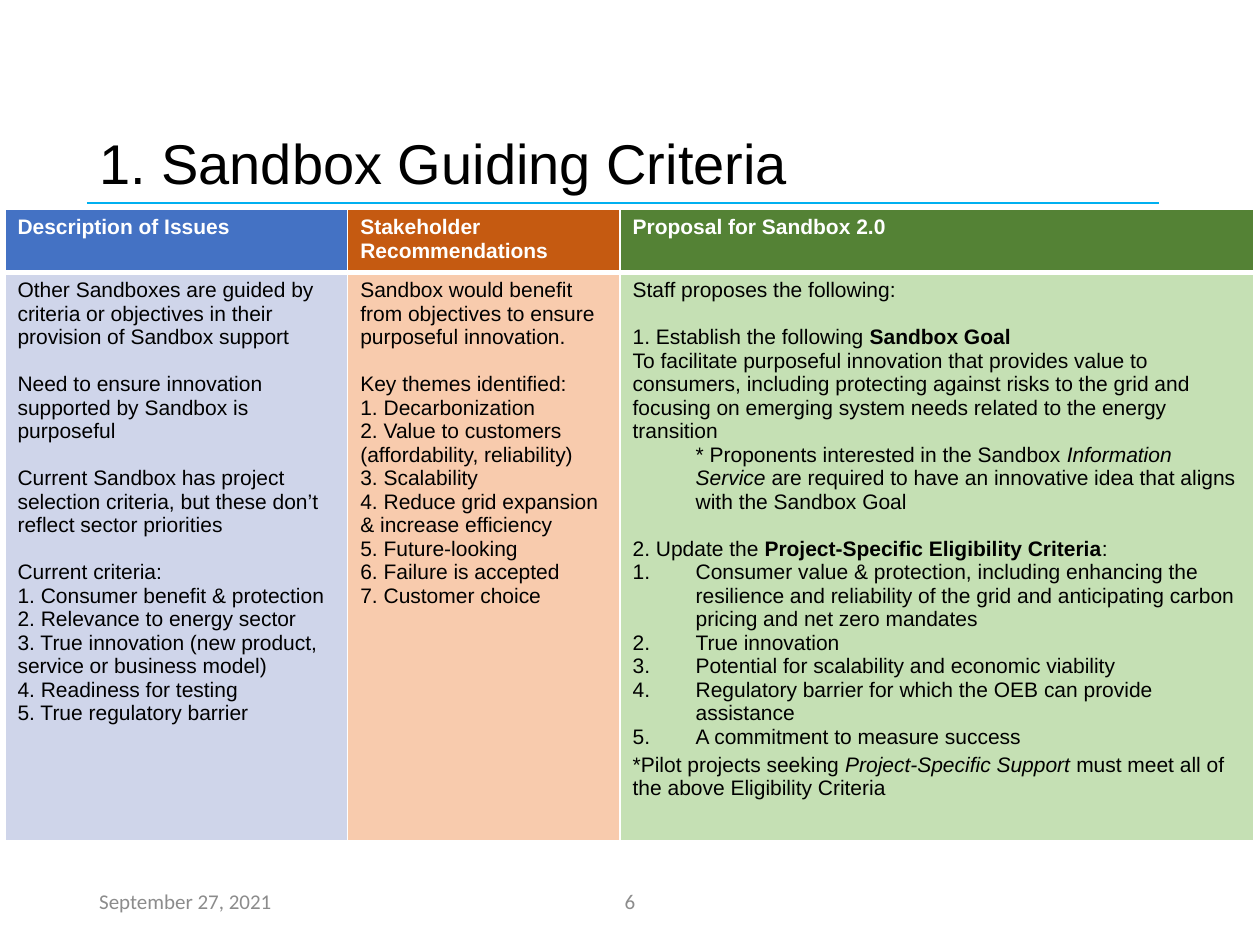
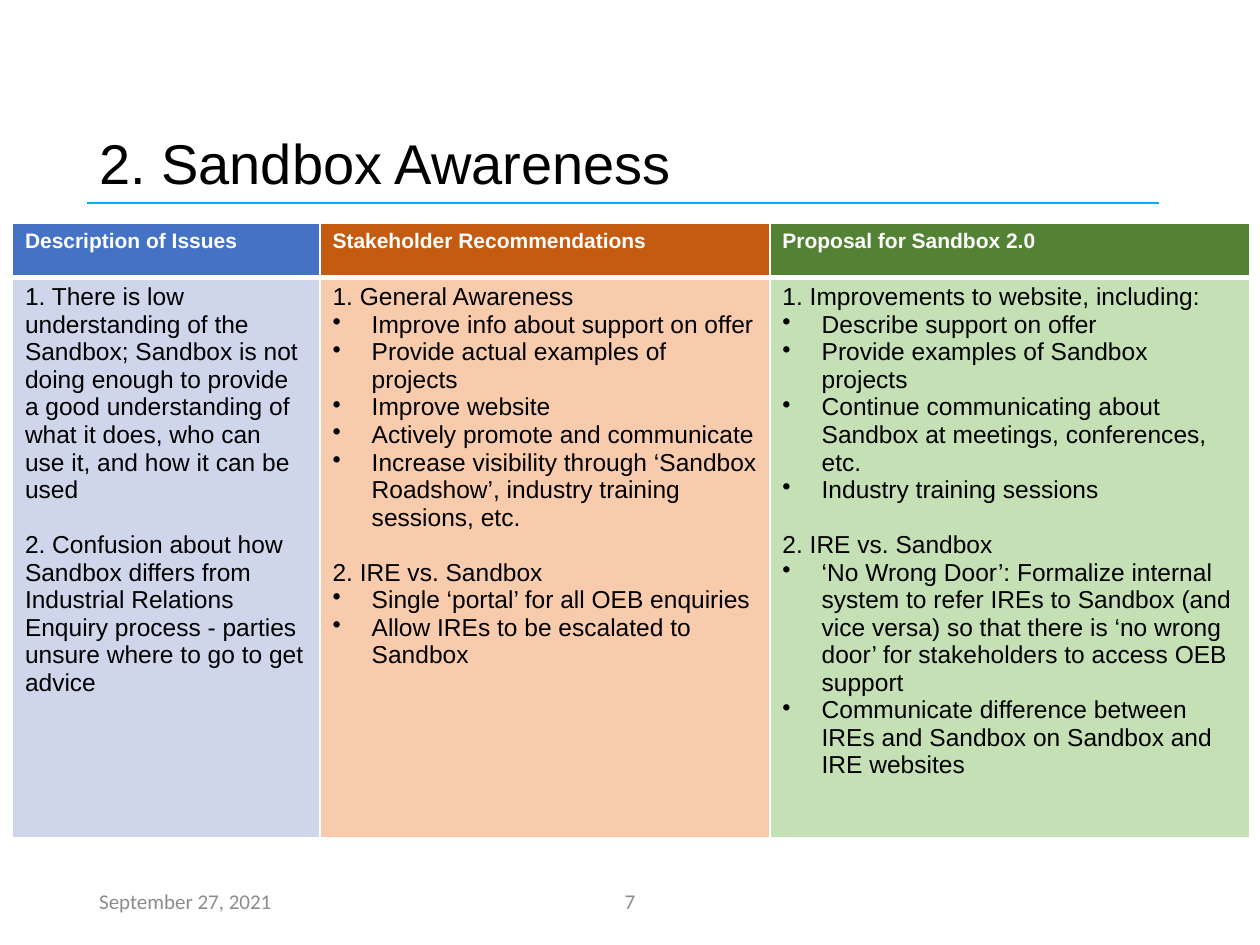
from dataclasses import dataclass

from lxml import etree
from pptx import Presentation
from pptx.dml.color import RGBColor
from pptx.enum.shapes import MSO_CONNECTOR
from pptx.enum.text import MSO_ANCHOR, PP_ALIGN
from pptx.oxml.ns import qn
from pptx.util import Cm, Pt

STRAIGHT = MSO_CONNECTOR.STRAIGHT
MIDDLE, BOTTOM = MSO_ANCHOR.MIDDLE, MSO_ANCHOR.BOTTOM
LEFT, CENTER = PP_ALIGN.LEFT, PP_ALIGN.CENTER

COLORS = {
    "text": "000000",
    "white": "FFFFFF",
    "rule": "00B0F0",
    "footer": "8C8C8C",
}
COLUMNS = [
    ("Description of Issues", "4472C4", "CFD5EA"),
    ("Stakeholder Recommendations", "C55A11", "F8CBAD"),
    ("Proposal for Sandbox 2.0", "548235", "C5E0B4"),
]
MARGIN_LEFT = 1.75
BULLETS = {
    "bullet": ("a:buChar", {"char": "•"}),
    "number": ("a:buAutoNum", {"type": "arabicPeriod"}),
}
INDENTS = {"bullet": (0.79, -0.79), "number": (1.27, -1.27), "note": (1.27, 0)}


@dataclass
class Line:
    runs: tuple
    kind: str = "plain"
    gap: float = 0


def line(*runs, kind="plain", gap=0):
    return Line(runs, kind, gap)


def items(kind, *texts):
    return [line(text, kind=kind) for text in texts]


def bold(text):
    return text, {"bold": True}


def italic(text):
    return text, {"italic": True}


def write(paragraph, text, size=12, color="text", font="Arial",
          bold=False, italic=False, align=LEFT):
    paragraph.alignment = align
    run = paragraph.add_run()
    run.text = text
    run.font.name = font
    run.font.size = Pt(size)
    run.font.bold = bold
    run.font.italic = italic
    run.font.color.rgb = RGBColor.from_string(COLORS[color])


def indent(paragraph, kind):
    if kind not in INDENTS:
        return
    properties = paragraph._p.get_or_add_pPr()
    margin, first = INDENTS[kind]
    properties.set("marL", str(Cm(margin)))
    properties.set("indent", str(Cm(first)))
    if kind in BULLETS:
        tag, attributes = BULLETS[kind]
        etree.SubElement(properties, qn(tag), attributes)


def set_borders(cell, **widths):
    properties = cell._tc.get_or_add_tcPr()
    for side in "LRTB":
        border = etree.SubElement(properties, qn(f"a:ln{side}"),
                                  w=str(Pt(widths.get(side, 1))))
        fill = etree.SubElement(border, qn("a:solidFill"))
        etree.SubElement(fill, qn("a:srgbClr"), val=COLORS["white"])


def fill_cell(cell, color):
    cell.fill.solid()
    cell.fill.fore_color.rgb = RGBColor.from_string(color)


def fill_body(cell, lines, size):
    frame = cell.text_frame
    for number, entry in enumerate(lines):
        paragraph = frame.add_paragraph() if number else frame.paragraphs[0]
        indent(paragraph, entry.kind)
        if entry.gap:
            paragraph.space_before = Pt(entry.gap)
        for run in entry.runs:
            text, style = (run, {}) if isinstance(run, str) else run
            write(paragraph, text, size=size, **style)


def add_label(slide, box, text, anchor=MIDDLE, spacing=None, **style):
    frame = slide.shapes.add_textbox(*map(Cm, box)).text_frame
    frame.word_wrap = True
    frame.vertical_anchor = anchor
    if spacing:
        frame.paragraphs[0].line_spacing = spacing
    write(frame.paragraphs[0], text, **style)


def add_heading(slide, box, title):
    left, top, width, height = box
    base = Cm(top + height)
    rule = slide.shapes.add_connector(STRAIGHT, Cm(left), base,
                                      Cm(left + width - 0.28), base)
    rule.line.color.rgb = RGBColor.from_string(COLORS["rule"])
    rule.line.width = Pt(1.5)
    etree.SubElement(rule._element.spPr, qn("a:effectLst"))
    add_label(slide, box, title, anchor=BOTTOM, spacing=0.9, size=32)


def add_footer(slide, box, page):
    left, top, width, height = box
    style = {"color": "footer", "font": "Calibri"}
    add_label(slide, (left, top, 5.72, height), "September 27, 2021", **style)
    number_width = 1.75
    add_label(slide, (left + (width - number_width) / 2, top, number_width, height),
              str(page), align=CENTER, **style)


def add_comparison(slide, origin, widths, heights, bodies, size):
    table = slide.shapes.add_table(2, len(widths), *map(Cm, origin),
                                   Cm(sum(widths)), Cm(sum(heights))).table
    table.first_row = table.horz_banding = False
    for row, height in zip(table.rows, heights):
        row.height = Cm(height)
    for index, (heading, dark, light) in enumerate(COLUMNS):
        table.columns[index].width = Cm(widths[index])
        header, body = table.cell(0, index), table.cell(1, index)
        set_borders(header, B=3)
        set_borders(body, T=3)
        fill_cell(header, dark)
        fill_cell(body, light)
        write(header.text_frame.paragraphs[0], heading, color="white", bold=True)
        fill_body(body, bodies[index], size)


def add_topic(deck, page, title, **comparison):
    slide = deck.slides.add_slide(deck.slide_layouts[6])
    add_heading(slide, (MARGIN_LEFT, 2.39, 21.9, 1.7), title)
    add_comparison(slide, **comparison)
    add_footer(slide, (MARGIN_LEFT, 17.65, 21.9, 1.02), page)


GAP_12, GAP_14 = 13.4, 15.7

CRITERIA = [
    [
        line("Other Sandboxes are guided by criteria or objectives in their "
             "provision of Sandbox support"),
        line("Need to ensure innovation supported by Sandbox is purposeful", gap=GAP_12),
        line("Current Sandbox has project selection criteria, but these don’t "
             "reflect sector priorities", gap=GAP_12),
        line("Current criteria:", gap=GAP_12),
        *items("plain",
               "1. Consumer benefit & protection",
               "2. Relevance to energy sector",
               "3. True innovation (new product, service or business model)",
               "4. Readiness for testing",
               "5. True regulatory barrier"),
    ],
    [
        line("Sandbox would benefit from objectives to ensure purposeful innovation."),
        line("Key themes identified:", gap=GAP_12),
        *items("plain",
               "1. Decarbonization",
               "2. Value to customers (affordability, reliability)",
               "3. Scalability",
               "4. Reduce grid expansion & increase efficiency",
               "5. Future-looking",
               "6. Failure is accepted",
               "7. Customer choice"),
    ],
    [
        line("Staff proposes the following:"),
        line("1. Establish the following ", bold("Sandbox Goal"), gap=GAP_12),
        line("To facilitate purposeful innovation that provides value to consumers, "
             "including protecting against risks to the grid and focusing on emerging "
             "system needs related to the energy transition"),
        line("* Proponents interested in the Sandbox ", italic("Information Service "),
             "are required to have an innovative idea that aligns with the Sandbox Goal",
             kind="note"),
        line("2. Update the ", bold("Project-Specific Eligibility Criteria"), ":",
             gap=GAP_12),
        *items("number",
               "Consumer value & protection, including enhancing the resilience and "
               "reliability of the grid and anticipating carbon pricing and net zero "
               "mandates",
               "True innovation",
               "Potential for scalability and economic viability",
               "Regulatory barrier for which the OEB can provide assistance",
               "A commitment to measure success"),
        line("*Pilot projects seeking ", italic("Project-Specific Support "),
             "must meet all of the above Eligibility Criteria", gap=2.5),
    ],
]

AWARENESS = [
    [
        line("1. There is low understanding of the Sandbox; Sandbox is not doing enough "
             "to provide a good understanding of what it does, who can use it, and how "
             "it can be used"),
        line("2. Confusion about how Sandbox differs from Industrial Relations Enquiry "
             "process - parties unsure where to go to get advice", gap=GAP_14),
    ],
    [
        line("1. General Awareness"),
        *items("bullet",
               "Improve info about support on offer",
               "Provide actual examples of projects",
               "Improve website",
               "Actively promote and communicate",
               "Increase visibility through ‘Sandbox Roadshow’, industry training "
               "sessions, etc."),
        line("2. IRE vs. Sandbox", gap=GAP_14),
        *items("bullet",
               "Single ‘portal’ for all OEB enquiries",
               "Allow IREs to be escalated to Sandbox"),
    ],
    [
        line("1. Improvements to website, including:"),
        *items("bullet",
               "Describe support on offer",
               "Provide examples of Sandbox projects",
               "Continue communicating about Sandbox at meetings, conferences, etc.",
               "Industry training sessions"),
        line("2. IRE vs. Sandbox", gap=GAP_14),
        *items("bullet",
               "‘No Wrong Door’: Formalize internal system to refer IREs to Sandbox (and "
               "vice versa) so that there is ‘no wrong door’ for stakeholders to access "
               "OEB support",
               "Communicate difference between IREs and Sandbox on Sandbox and IRE "
               "websites"),
    ],
]


def main():
    deck = Presentation()
    deck.slide_width, deck.slide_height = Cm(25.4), Cm(19.05)
    add_topic(deck, 6, "1. Sandbox Guiding Criteria", origin=(0.1, 4.22),
              widths=(6.91, 5.49, 12.78), heights=(1.24, 11.43),
              bodies=CRITERIA, size=12)
    add_topic(deck, 7, "2. Sandbox Awareness", origin=(0.25, 4.5),
              widths=(6.2, 9.07, 9.68), heights=(1.09, 11.3),
              bodies=AWARENESS, size=14)
    deck.save("out.pptx")


if __name__ == "__main__":
    main()
